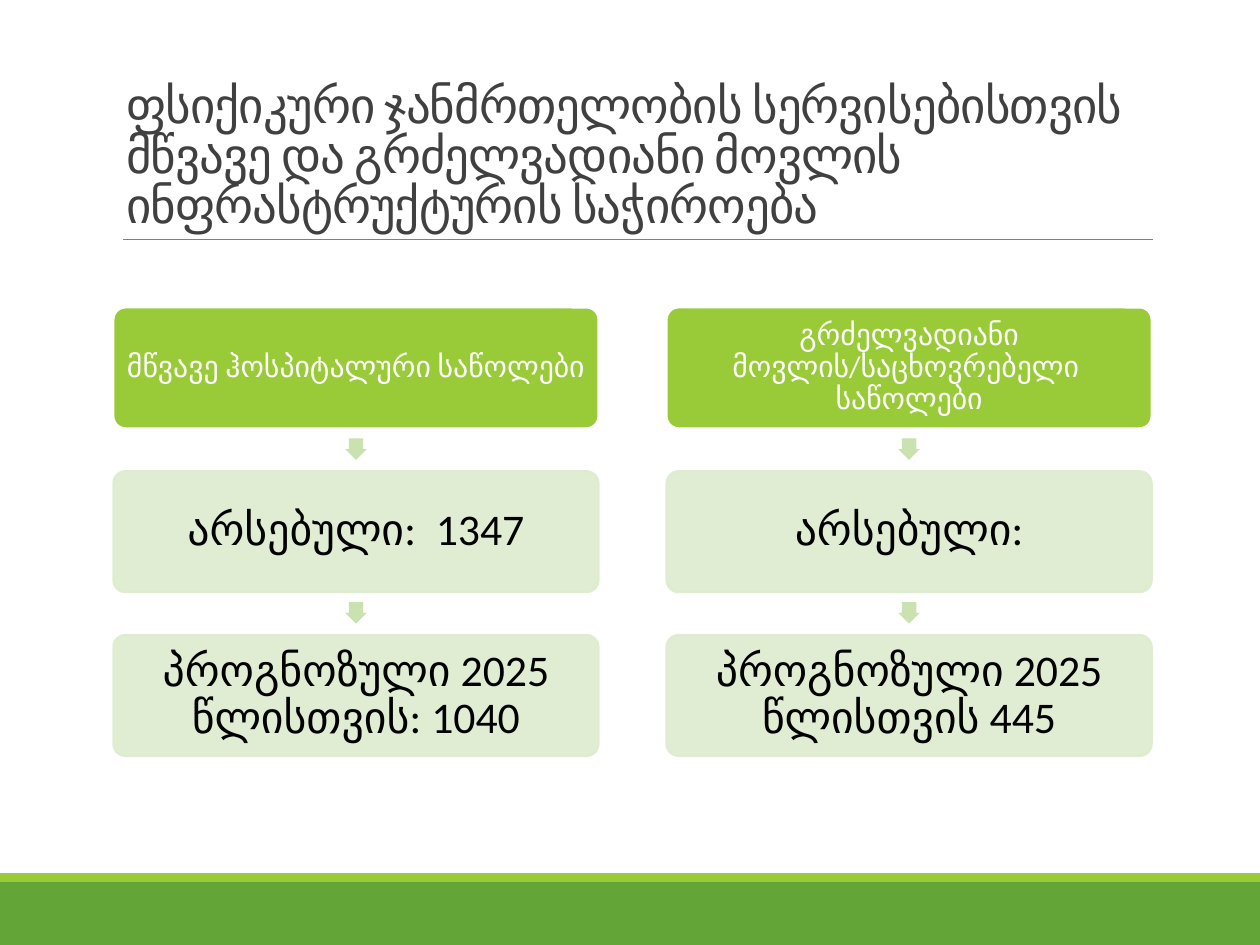
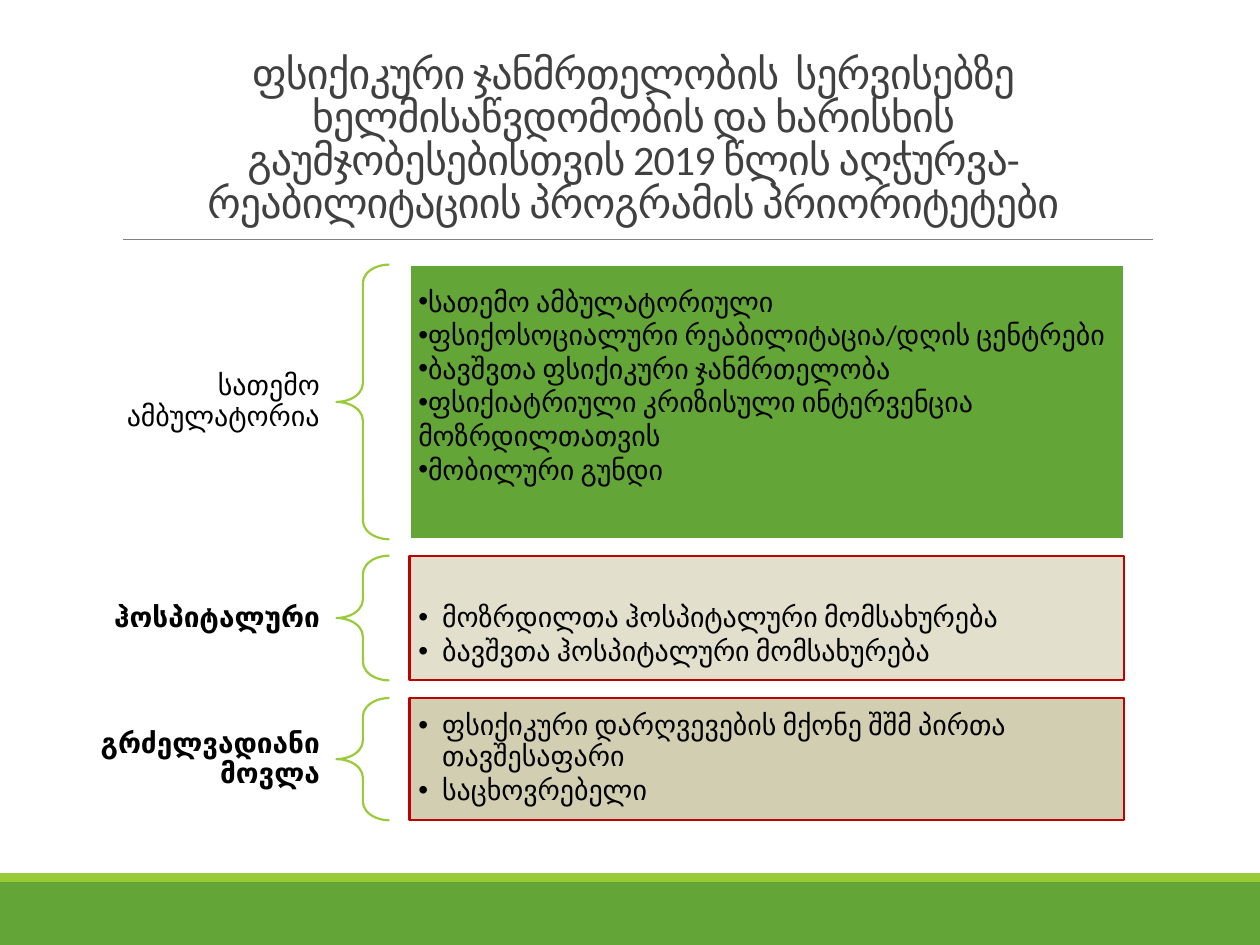
from lxml.etree import SubElement
from pptx import Presentation
from pptx.dml.color import RGBColor
from pptx.enum.shapes import MSO_CONNECTOR, MSO_SHAPE
from pptx.enum.text import MSO_ANCHOR, MSO_AUTO_SIZE, PP_ALIGN
from pptx.oxml.ns import qn
from pptx.util import Inches, Pt

color = RGBColor.from_string
GREEN, LIME, PALE, ARROW = "63A537", "99CB38", "DEECCE", "CAE2AF"
WHITE, BLACK, TITLE_GRAY, RULE_GRAY, RED = "FFFFFF", "000000", "404040", "808080", "C00000"


def draw(slide, kind, box, fill=None, line=None, adjustments=()):
    shape = slide.shapes.add_shape(kind, *[Inches(v) for v in box])
    shape.shadow.inherit = False
    if fill:
        shape.fill.solid()
        shape.fill.fore_color.rgb = color(fill)
    else:
        shape.fill.background()
    if line:
        shape.line.color.rgb = color(line)
        shape.line.width = Pt(1.25)
    else:
        shape.line.fill.background()
    for index, value in enumerate(adjustments):
        shape.adjustments[index] = value
    return shape


def write(frame, texts, size, ink, margins, paragraph_format, anchor=MSO_ANCHOR.MIDDLE, bold=False):
    left, top, right, bottom = [Inches(v) for v in margins]
    frame_format = {
        "word_wrap": True, "auto_size": MSO_AUTO_SIZE.NONE, "vertical_anchor": anchor,
        "margin_left": left, "margin_top": top, "margin_right": right, "margin_bottom": bottom,
    }
    for name, value in frame_format.items():
        setattr(frame, name, value)
    for index, text in enumerate(texts):
        paragraph = frame.add_paragraph() if index else frame.paragraphs[0]
        for name, value in paragraph_format.items():
            setattr(paragraph, name, value)
        run = paragraph.add_run()
        run.text = text
        for name, value in {"name": "Calibri", "size": Pt(size), "bold": bold}.items():
            setattr(run.font, name, value)
        run.font.color.rgb = color(ink)


presentation = Presentation()
presentation.slide_width, presentation.slide_height = Inches(10), Inches(7.5)

headings = [
    ("ფსიქიკური ჯანმრთელობის სერვისებისთვის მწვავე და გრძელვადიანი მოვლის ინფრასტრუქტურის საჭიროება",
     28, 1.9, PP_ALIGN.LEFT),
    ("ფსიქიკური ჯანმრთელობის  სერვისებზე ხელმისაწვდომობის და ხარისხის გაუმჯობესებისთვის "
     "2019 წლის აღჭურვა-რეაბილიტაციის პროგრამის პრიორიტეტები",
     24, 1.85, PP_ALIGN.CENTER),
]
slides = []
for heading, size, bottom, alignment in headings:
    slide = presentation.slides.add_slide(presentation.slide_layouts[5])
    draw(slide, MSO_SHAPE.RECTANGLE, (0, 7, 10, 0.5), GREEN)
    draw(slide, MSO_SHAPE.RECTANGLE, (0, 6.93, 10, 0.07), LIME)
    rule = slide.shapes.add_connector(
        MSO_CONNECTOR.STRAIGHT, Inches(0.98), Inches(1.9), Inches(9.15), Inches(1.9))
    rule.line.color.rgb = color(RULE_GRAY)
    rule.line.width = Pt(0.5)
    SubElement(rule._element.spPr, qn("a:effectLst"))
    title = slide.shapes.title
    place = {"left": 0.9, "top": 0.31, "width": 8.25, "height": bottom - 0.31}
    for name, value in place.items():
        setattr(title, name, Inches(value))
    write(title.text_frame, [heading], size, TITLE_GRAY, (0.1, 0.05, 0.1, 0.05),
          {"alignment": alignment, "line_spacing": 0.85}, MSO_ANCHOR.BOTTOM)
    title.text_frame.paragraphs[0].runs[0].font._element.set("spc", "-50")
    slides.append(slide)

beds_slide, priorities_slide = slides

bed_columns = [
    ["მწვავე ჰოსპიტალური საწოლები", "არსებული:  1347", "პროგნოზული 2025 წლისთვის: 1040"],
    ["გრძელვადიანი მოვლის/საცხოვრებელი  საწოლები", "არსებული:", "პროგნოზული 2025 წლისთვის 445"],
]
card_width, card_height, arrow_size = 3.85, 0.96, 0.17
for column, steps in enumerate(bed_columns):
    left = 0.9 + column * 4.39
    for row, step in enumerate(steps):
        top = 2.44 + row * 1.3
        fill, edge, ink, size = (PALE, PALE, BLACK, 25) if row else (LIME, WHITE, WHITE, 17)
        card = draw(beds_slide, MSO_SHAPE.ROUNDED_RECTANGLE,
                    (left, top, card_width, card_height), fill, edge, [0.1])
        write(card.text_frame, [step], size, ink, [0.05] * 4,
              {"alignment": PP_ALIGN.CENTER, "line_spacing": 0.9})
        if row:
            for tint in card._element.spPr.iter(qn("a:srgbClr")):
                SubElement(tint, qn("a:alpha"), val="90000")
            arrow = draw(beds_slide, MSO_SHAPE.RIGHT_ARROW,
                         (left + (card_width - arrow_size) / 2, top - 0.26, arrow_size, arrow_size),
                         ARROW, adjustments=[0.667, 0.5])
            arrow.rotation = 90

priorities = [
    ("სათემო ამბულატორია", False, 2.1, 2.18, GREEN, WHITE, 0, (0.07, 0.34), {"line_spacing": 1.0},
     ["სათემო ამბულატორიული", "ფსიქოსოციალური რეაბილიტაცია/დღის ცენტრები",
      "ბავშვთა ფსიქიკური ჯანმრთელობა",
      "ფსიქიატრიული კრიზისული ინტერვენცია მოზრდილთათვის", "მობილური გუნდი"]),
    ("ჰოსპიტალური", True, 4.41, 0.99, "E2DFCC", RED, 0.19, (0.35, 0.07),
     {"line_spacing": 0.9, "space_after": Pt(2.4)},
     ["მოზრდილთა ჰოსპიტალური მომსახურება", "ბავშვთა ჰოსპიტალური მომსახურება"]),
    ("გრძელვადიანი მოვლა", True, 5.54, 0.97, "D2CEB1", RED, 0.19, (0.07, 0.07),
     {"line_spacing": 0.9, "space_after": Pt(2.4)},
     ["ფსიქიკური დარღვევების მქონე შშმ პირთა თავშესაფარი", "საცხოვრებელი"]),
]
label_height = 0.76
for label, bold, top, height, fill, edge, hang, (above, below), spacing, services in priorities:
    group_label = priorities_slide.shapes.add_textbox(
        Inches(0.58), Inches(top + (height - label_height) / 2), Inches(2.08), Inches(label_height))
    write(group_label.text_frame, [label], 16, BLACK, (0.12, 0.04, 0.12, 0.04),
          {"alignment": PP_ALIGN.RIGHT, "line_spacing": 0.9}, bold=bold)
    draw(priorities_slide, MSO_SHAPE.LEFT_BRACE, (2.67, top, 0.42, height),
         line=LIME, adjustments=[0.35, 0.5])
    service_panel = draw(priorities_slide, MSO_SHAPE.RECTANGLE, (3.25, top, 5.67, height), fill, edge)
    write(service_panel.text_frame, services, 16, BLACK, (0.07, above, 0.07, below),
          {"alignment": PP_ALIGN.LEFT, **spacing})
    for paragraph in service_panel.text_frame.paragraphs:
        properties = paragraph._p.get_or_add_pPr()
        properties.set("marL", str(Inches(hang)))
        properties.set("indent", str(-Inches(hang)))
        SubElement(properties, qn("a:buFont"), typeface="Arial")
        SubElement(properties, qn("a:buChar"), char="•")

presentation.save("out.pptx")
